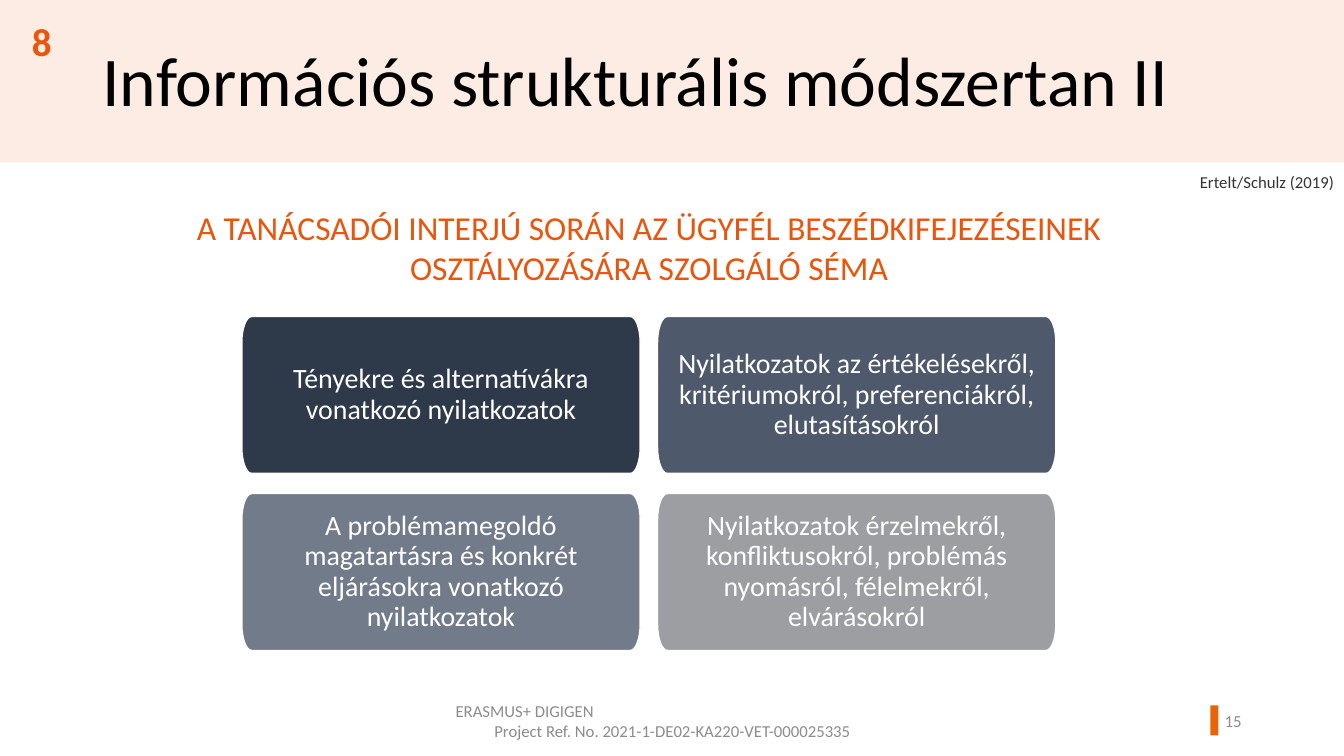
from collections import namedtuple

from lxml import etree
from pptx import Presentation
from pptx.dml.color import RGBColor
from pptx.enum.shapes import MSO_SHAPE
from pptx.enum.text import MSO_ANCHOR, PP_ALIGN
from pptx.oxml.ns import qn
from pptx.util import Cm, Pt

RECTANGLE = MSO_SHAPE.RECTANGLE
TOP, MIDDLE = MSO_ANCHOR.TOP, MSO_ANCHOR.MIDDLE
LEFT, CENTER, RIGHT = PP_ALIGN.LEFT, PP_ALIGN.CENTER, PP_ALIGN.RIGHT

BLACK = RGBColor(0x00, 0x00, 0x00)
WHITE = RGBColor(0xFF, 0xFF, 0xFF)
PEACH = RGBColor(0xFD, 0xEC, 0xE3)
ORANGE = RGBColor(0xE9, 0x55, 0x0D)
MARKER_ORANGE = RGBColor(0xE8, 0x65, 0x07)
FOOTER_GREY = RGBColor(0x8C, 0x8C, 0x8C)
SOURCE_GREY = RGBColor(0x33, 0x33, 0x33)
NAVY = RGBColor(0x2E, 0x39, 0x49)
SLATE = RGBColor(0x4E, 0x59, 0x6B)
STEEL = RGBColor(0x72, 0x7B, 0x89)
GREY = RGBColor(0x9C, 0x9E, 0xA1)

FONT = "Calibri"
SLIDE_WIDTH, SLIDE_HEIGHT = 34.01, 19.13
HEADER_HEIGHT = 4.11
FOOTER_TOP = 17.73
ARC_PULL = 0.55  # share of the way to the corner that makes a round arc

Box = namedtuple("Box", "left top width height")  # centimetres

CARDS = [
    ("Tényekre és alternatívákra vonatkozó nyilatkozatok", NAVY),
    ("Nyilatkozatok az értékelésekről, kritériumokról, preferenciákról, "
     "elutasításokról", SLATE),
    ("A problémamegoldó magatartásra és konkrét eljárásokra vonatkozó "
     "nyilatkozatok", STEEL),
    ("Nyilatkozatok érzelmekről, konfliktusokról, problémás nyomásról, "
     "félelmekről, elvárásokról", GREY),
]


def inside(box, left, top, width, height):
    """Return a box whose position is measured from the corner of another."""
    return Box(box.left + left, box.top + top, width, height)


def write(paragraph, text, size, color, align, bold=False, spacing=None):
    paragraph.alignment = align
    if spacing:
        paragraph.line_spacing = spacing
    run = paragraph.add_run()
    run.text = text
    run.font.name = FONT
    run.font.size = Pt(size)
    run.font.bold = bold
    run.font.color.rgb = color


def add_text(slide, box, text, size, color, align, anchor=TOP, **style):
    frame = slide.shapes.add_textbox(*map(Cm, box)).text_frame
    frame.word_wrap = True
    frame.vertical_anchor = anchor
    write(frame.paragraphs[0], text, size, color, align, **style)


def add_bar(slide, box, color):
    bar = slide.shapes.add_shape(RECTANGLE, *map(Cm, box))
    bar.shadow.inherit = False
    bar.fill.solid()
    bar.fill.fore_color.rgb = color
    bar.line.fill.background()


def add_header(slide, box):
    add_bar(slide, box, PEACH)
    add_text(slide, inside(box, 2.34, 1.04, 28.17, 2.18),
             "Információs strukturális módszertan II", 50, BLACK, LEFT,
             MIDDLE, spacing=0.9)
    add_text(slide, inside(box, 0, 0.32, 2.11, 1.45), "8", 28, ORANGE, CENTER,
             bold=True)


def round_corners(card):
    """Turn every second segment of the outline into a quarter arc."""
    points = list(card.element.iter(qn("a:pt")))
    places = [(int(pt.get("x")), int(pt.get("y"))) for pt in points]
    for index in range(0, 8, 2):
        (x1, y1), (x2, y2) = places[index:index + 2]
        corner_x, corner_y = (x1, y2) if index % 4 == 0 else (x2, y1)
        segment = points[index + 1].getparent()
        arc = etree.Element(qn("a:cubicBezTo"))
        controls = [(x + (corner_x - x) * ARC_PULL,
                     y + (corner_y - y) * ARC_PULL)
                    for x, y in ((x1, y1), (x2, y2))]
        for x, y in controls + [(x2, y2)]:
            etree.SubElement(arc, qn("a:pt"), x=str(round(x)), y=str(round(y)))
        segment.getparent().replace(segment, arc)


def add_card(slide, box, text, color, radius_x=0.25, radius_y=0.66):
    left, top = Cm(box.left), Cm(box.top)
    right, bottom = Cm(box.left + box.width), Cm(box.top + box.height)
    dx, dy = Cm(radius_x), Cm(radius_y)
    start = (left, top + dy)
    builder = slide.shapes.build_freeform(*start)
    builder.add_line_segments([
        (left + dx, top), (right - dx, top),
        (right, top + dy), (right, bottom - dy),
        (right - dx, bottom), (left + dx, bottom),
        (left, bottom - dy), start,
    ], close=True)
    card = builder.convert_to_shape()
    round_corners(card)
    card.shadow.inherit = False
    card.fill.solid()
    card.fill.fore_color.rgb = color
    card.line.color.rgb = WHITE
    card.line.width = Pt(1)
    frame = card.text_frame
    frame.word_wrap = True
    frame.vertical_anchor = MIDDLE
    frame.margin_left = frame.margin_right = Cm(0.28)
    frame.margin_top = frame.margin_bottom = Cm(0.28)
    write(frame.paragraphs[0], text, 20, WHITE, CENTER, spacing=0.9)


def add_card_grid(slide, box, gap_x=0.44, gap_y=0.51):
    width, height = (box.width - gap_x) / 2, (box.height - gap_y) / 2
    for index, (text, color) in enumerate(CARDS):
        row, column = divmod(index, 2)
        place = inside(box, column * (width + gap_x), row * (height + gap_y),
                       width, height)
        add_card(slide, place, text, color)


def add_body(slide, box):
    add_card_grid(slide, inside(box, 6.12, 3.9, 20.6, 8.45))
    add_text(slide, inside(box, 1.97, 1.01, 28.91, 2.31),
             "A TANÁCSADÓI INTERJÚ SORÁN AZ ÜGYFÉL BESZÉDKIFEJEZÉSEINEK "
             "OSZTÁLYOZÁSÁRA SZOLGÁLÓ SÉMA", 24, ORANGE, CENTER)
    add_text(slide, inside(box, 28.9, 0.11, 5.11, 0.76),
             "Ertelt/Schulz (2019)", 12, SOURCE_GREY, RIGHT)


def add_footer(slide, box):
    add_bar(slide, inside(box, 30.63, 0.12, 0.2, 0.76), MARKER_ORANGE)
    add_text(slide, inside(box, 30.02, 0, 1.65, 1.02), "15", 12.1,
             FOOTER_GREY, RIGHT, MIDDLE)
    add_text(slide, inside(box, 11.28, 0, 11.48, 1.02),
             "ERASMUS+ DIGIGEN \n"
             "Project Ref. No. 2021-1-DE02-KA220-VET-000025335",
             12, FOOTER_GREY, CENTER, MIDDLE)


def main():
    deck = Presentation()
    deck.slide_width, deck.slide_height = Cm(SLIDE_WIDTH), Cm(SLIDE_HEIGHT)
    slide = deck.slides.add_slide(deck.slide_layouts[6])
    add_header(slide, Box(0, 0, SLIDE_WIDTH, HEADER_HEIGHT))
    add_body(slide, Box(0, HEADER_HEIGHT, SLIDE_WIDTH,
                        FOOTER_TOP - HEADER_HEIGHT))
    add_footer(slide, Box(0, FOOTER_TOP, SLIDE_WIDTH,
                          SLIDE_HEIGHT - FOOTER_TOP))
    deck.save("out.pptx")


if __name__ == "__main__":
    main()
